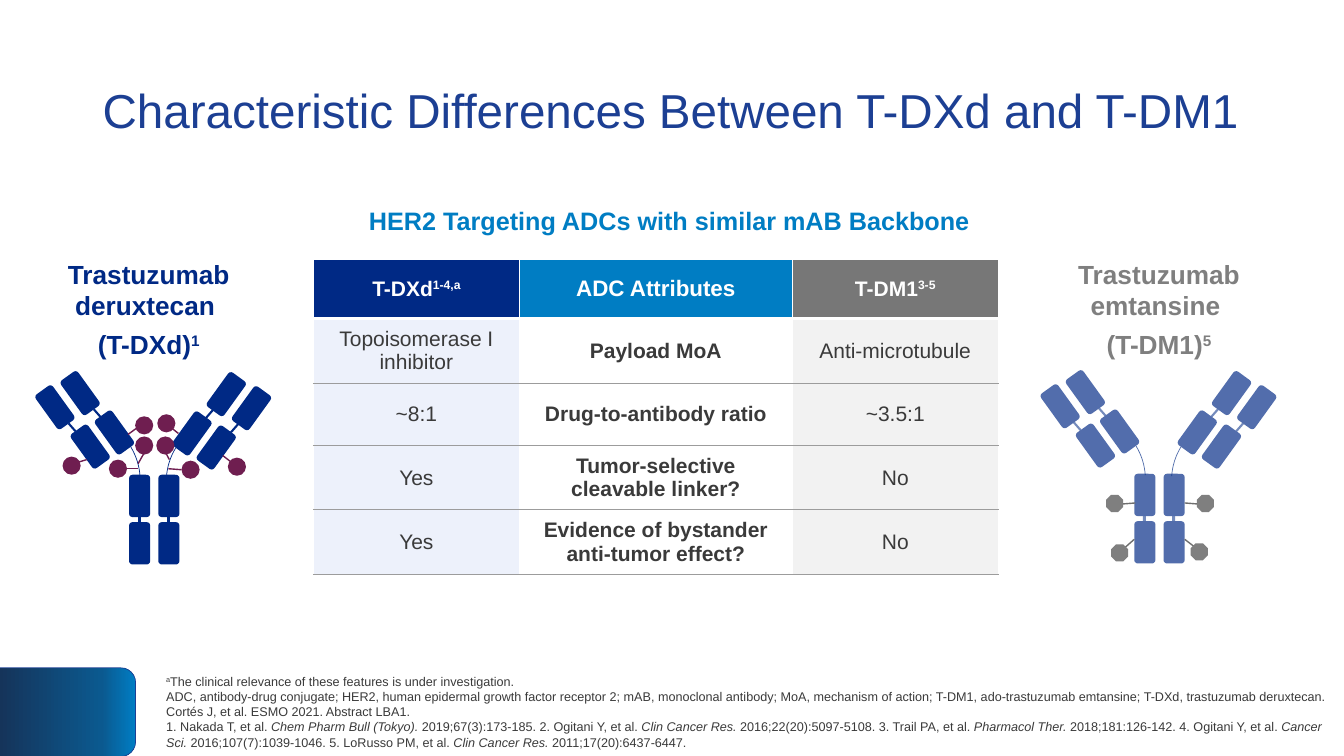
import copy

import pptx
import pptx.dml.color
import pptx.enum.shapes
import pptx.enum.text
import pptx.oxml
import pptx.oxml.ns
import pptx.util

PX = 9144  # one hundredth of an inch
SHAPE = pptx.enum.shapes.MSO_SHAPE
ALIGN = pptx.enum.text.PP_ALIGN
ANCHOR = pptx.enum.text.MSO_ANCHOR

NAVY, BLUE, TITLE_BLUE, PLUM = "002985", "007DC3", "1C3F93", "6F1E50"
GRAY, DARK, RULE, WHITE = "7F7F7F", "3A3A3A", "9C9C9C", "FFFFFF"
MIRROR = 304  # left edge plus right edge of a mirrored pair in an antibody


def rgb(value):
    return pptx.dml.color.RGBColor.from_string(value)


def fade(fill, percent):
    """Give a solid colour its opacity."""
    color = fill._xPr.find(".//" + pptx.oxml.ns.qn("a:srgbClr"))
    color.append(pptx.oxml.parse_xml(
        f'<a:alpha {pptx.oxml.ns.nsdecls("a")} val="{percent * 1000}"/>'))


class SlideBuilder:
    def __init__(self, prs, font):
        self.slide = prs.slides.add_slide(prs.slide_layouts[6])
        self.shapes = self.slide.shapes
        self.font = font

    def start_group(self):
        self.shapes = self.slide.shapes.add_group_shape().shapes

    def end_group(self):
        self.shapes = self.slide.shapes

    def fill_paragraph(self, p, text, size, color, bold=False, align=ALIGN.LEFT):
        """Add styled runs; *stars* mark italics and ^carets^ superscript."""
        p.alignment = align
        for i, part in enumerate(text.split("*")):
            for j, piece in enumerate(part.split("^")):
                if not piece:
                    continue
                r = p.add_run()
                r.text = piece
                r.font.name = self.font
                r.font.size = pptx.util.Pt(size)
                r.font.bold = bold
                r.font.italic = i % 2 == 1
                r.font.color.rgb = rgb(color)
                if j % 2:
                    r._r.get_or_add_rPr().set("baseline", "30000")

    def text(self, box, lines, size, color, bold=False, align=ALIGN.LEFT,
             anchor=ANCHOR.TOP, after=0, spacing=1.0):
        tf = self.shapes.add_textbox(*(v * PX for v in box)).text_frame
        tf.word_wrap = True
        tf.vertical_anchor = anchor
        for i, line in enumerate(lines):
            p = tf.add_paragraph() if i else tf.paragraphs[0]
            p.space_after = pptx.util.Pt(after)
            p.line_spacing = spacing
            self.fill_paragraph(p, line, size, color, bold, align)

    def shape(self, kind, box, fill=None, opacity=100, rotation=0):
        sp = self.shapes.add_shape(kind, *(v * PX for v in box))
        sp.shadow.inherit = False
        sp.rotation = rotation
        sp.line.fill.background()
        if fill:
            sp.fill.solid()
            sp.fill.fore_color.rgb = rgb(fill)
            if opacity < 100:
                fade(sp.fill, opacity)
        else:
            sp.fill.background()
        return sp

    def arc(self, box, color, rotation, start, end):
        sp = self.shape(SHAPE.ARC, box, rotation=rotation)
        sp.adjustments[0], sp.adjustments[1] = start, end
        sp.line.color.rgb = rgb(color)
        sp.line.width = pptx.util.Pt(0.5)

    def line(self, ends, color, width, opacity=100):
        cx = self.shapes.add_connector(
            pptx.enum.shapes.MSO_CONNECTOR.STRAIGHT, *(v * PX for v in ends))
        cx.line.color.rgb = rgb(color)
        cx.line.width = pptx.util.Pt(width)
        if opacity < 100:
            fade(cx.line.fill, opacity)
        cx._element.spPr.append(pptx.oxml.parse_xml(
            f'<a:effectLst {pptx.oxml.ns.nsdecls("a")}/>'))

    def gradient_tab(self, box, rotation, stops, outline):
        sp = self.shape(SHAPE.ROUND_2_SAME_RECTANGLE, box, rotation=rotation)
        sp.fill.gradient()
        sp.fill.gradient_angle = 270
        stop_list = sp._element.spPr.find(".//" + pptx.oxml.ns.qn("a:gsLst"))
        stop_list.append(copy.deepcopy(stop_list[0]))
        for stop, (position, color) in zip(sp.fill.gradient_stops, stops):
            stop.position = position
            stop.color.rgb = rgb(color)
        sp.line.color.rgb = rgb(outline)
        sp.line.width = pptx.util.Pt(0.5)

    def cell(self, cell, text, fill, size, color, bold, top, bottom):
        """Style a cell; top and bottom are (colour, points) borders."""
        side = (WHITE, 1)
        for tag, (rule, width) in zip("LRTB", (side, side, top, bottom)):
            cell._tc.get_or_add_tcPr().append(pptx.oxml.parse_xml(
                f'<a:ln{tag} {pptx.oxml.ns.nsdecls("a")} w="{int(width * 12700)}">'
                f'<a:solidFill><a:srgbClr val="{rule}"/></a:solidFill></a:ln{tag}>'))
        cell.fill.solid()
        cell.fill.fore_color.rgb = rgb(fill)
        cell.vertical_anchor = ANCHOR.MIDDLE
        cell.margin_left = cell.margin_right = 13 * PX
        cell.margin_top = cell.margin_bottom = 7 * PX
        self.fill_paragraph(cell.text_frame.paragraphs[0], text, size, color, bold,
                            ALIGN.CENTER)

    def table(self, left, top, widths, heights, rows, header_fills, body_fills):
        tbl = self.shapes.add_table(len(rows), len(widths), left * PX, top * PX,
                                    sum(widths) * PX, sum(heights) * PX).table
        tbl.horz_banding = False
        for column, width in zip(tbl.columns, widths):
            column.width = width * PX
        last = len(rows) - 1
        for i, row in enumerate(rows):
            tbl.rows[i].height = heights[i] * PX
            above = (WHITE, 1) if i < 2 else (RULE, 0.75)
            below = (WHITE, 3) if i == 0 else (RULE, 1 if i == last else 0.75)
            for j, text in enumerate(row):
                middle = j == 1
                if i == 0:
                    style = header_fills[j], 16 if middle else 15, WHITE, True
                else:
                    style = body_fills[j], 15, DARK, middle
                self.cell(tbl.cell(i, j), text, *style, above, below)

    def antibody(self, dx, dy, opacity, line_color, line_opacity):
        """Draw the Y: two mirrored arms, their hinges and the stem."""
        def domain(x, y, rotation=0):
            self.shape(SHAPE.ROUNDED_RECTANGLE, (x + dx, y + dy, 21, 42),
                       NAVY, opacity, rotation)

        def bond(x1, y1, x2, y2, width):
            self.line((x1 + dx, y1 + dy, x2 + dx, y2 + dy),
                      line_color, width, line_opacity)

        for x, y in ((44, 383), (79, 422), (69, 369), (103, 408)):
            domain(x, y, 324.2)
            domain(MIRROR - 21 - x, y + 1, 35.8)
        for x, y in ((68, 420), (93, 406)):
            bond(x, y, x + 7, y + 8, 1.5)
            bond(MIRROR - x, y + 1, MIRROR - x - 7, y + 9, 1.5)
        self.arc((12 + dx, 413 + dy, 127, 127), line_color, 58.8, 162, 178.48)
        self.arc((165 + dx, 414 + dy, 127, 127), line_color, 301.2, 145.52, 162)
        for x in (128, 157):
            domain(x, 471)
            domain(x, 518)
            bond(x + 10, 519, x + 10, 512, 2.25)

    def payloads(self, kind, size, color, line_color, items):
        for *ends, left, top in items:
            self.line(ends, line_color, 1)
            self.shape(kind, (left, top, size, size), color)


def main():
    prs = pptx.Presentation()
    prs.slide_width, prs.slide_height = 1333 * PX, 750 * PX
    s = SlideBuilder(prs, "Arial")

    s.gradient_tab((23, 639, 88, 135), 90,
                   ((0, BLUE), (0.25, "0B598F"), (1, "15345A")), TITLE_BLUE)
    s.text((92, 40, 1150, 145), ["Characteristic Differences Between T-DXd and T-DM1"],
           34, TITLE_BLUE, anchor=ANCHOR.MIDDLE, spacing=0.9)

    s.table(311, 257, (204, 271, 204), (59, 62, 62, 62, 62), (
        ("T-DXd^1-4,a^", "ADC Attributes", "T-DM1^3-5^"),
        ("Topoisomerase I inhibitor", "Payload MoA", "Anti-microtubule"),
        ("~8:1", "Drug-to-antibody ratio", "~3.5:1"),
        ("Yes", "Tumor-selective cleavable linker?", "No"),
        ("Yes", "Evidence of bystander anti-tumor effect?", "No"),
    ), (NAVY, BLUE, "777777"), ("EDF1FB", WHITE, "F2F2F2"))

    label = dict(bold=True, align=ALIGN.CENTER, after=5.3)
    s.start_group()
    s.antibody(0, 0, 100, NAVY, 100)
    s.payloads(SHAPE.OVAL, 18, PLUM, PLUM, (
        (86, 456, 76, 459, 62, 453), (137, 465, 124, 465, 108, 456),
        (146, 444, 137, 460, 134, 433), (142, 420, 127, 431, 134, 413),
        (221, 452, 230, 459, 226, 454), (167, 465, 180, 466, 180, 457),
        (160, 441, 168, 456, 155, 433), (163, 419, 177, 430, 156, 411)))
    s.text((43, 251, 209, 111), ["Trastuzumab deruxtecan ", "(T-DXd)^1^"],
           18.7, NAVY, **label)

    s.start_group()
    s.antibody(997, -1, 68, "526EAC", 80)
    s.payloads(SHAPE.OCTAGON, 17, GRAY, "6E6E6E", (
        (1126, 499, 1113, 500, 1097, 491), (1175, 499, 1188, 500, 1187, 491),
        (1125, 535, 1116, 543, 1102, 540), (1175, 535, 1184, 542, 1181, 539)))
    s.text((1045, 251, 209, 111), ["Trastuzumab emtansine ", "(T-DM1)^5^"],
           18.7, GRAY, **label)
    s.end_group()

    s.text((356, 199, 622, 40), ["HER2 Targeting ADCs with similar mAB Backbone"],
           18, BLUE, bold=True)
    s.text((155, 662, 1178, 88), (
        "^a^The clinical relevance of these features is under investigation.",
        "ADC, antibody-drug conjugate; HER2, human epidermal growth factor receptor 2; "
        "mAB, monoclonal antibody; MoA, mechanism of action; T-DM1, ado-trastuzumab "
        "emtansine; T-DXd, trastuzumab deruxtecan.",
        "Cortés J, et al. ESMO 2021. Abstract LBA1.",
        "1. Nakada T, et al. *Chem Pharm Bull (Tokyo). *2019;67(3):173-185. "
        "2. Ogitani Y, et al. *Clin Cancer Res. *2016;22(20):5097-5108. "
        "3. Trail PA, et al. *Pharmacol Ther. *2018;181:126-142. "
        "4. Ogitani Y, et al. *Cancer Sci. *2016;107(7):1039-1046. "
        "5. LoRusso PM, et al. *Clin Cancer Res. *2011;17(20):6437-6447.",
    ), 9, DARK, anchor=ANCHOR.MIDDLE)

    prs.save("out.pptx")


if __name__ == "__main__":
    main()
